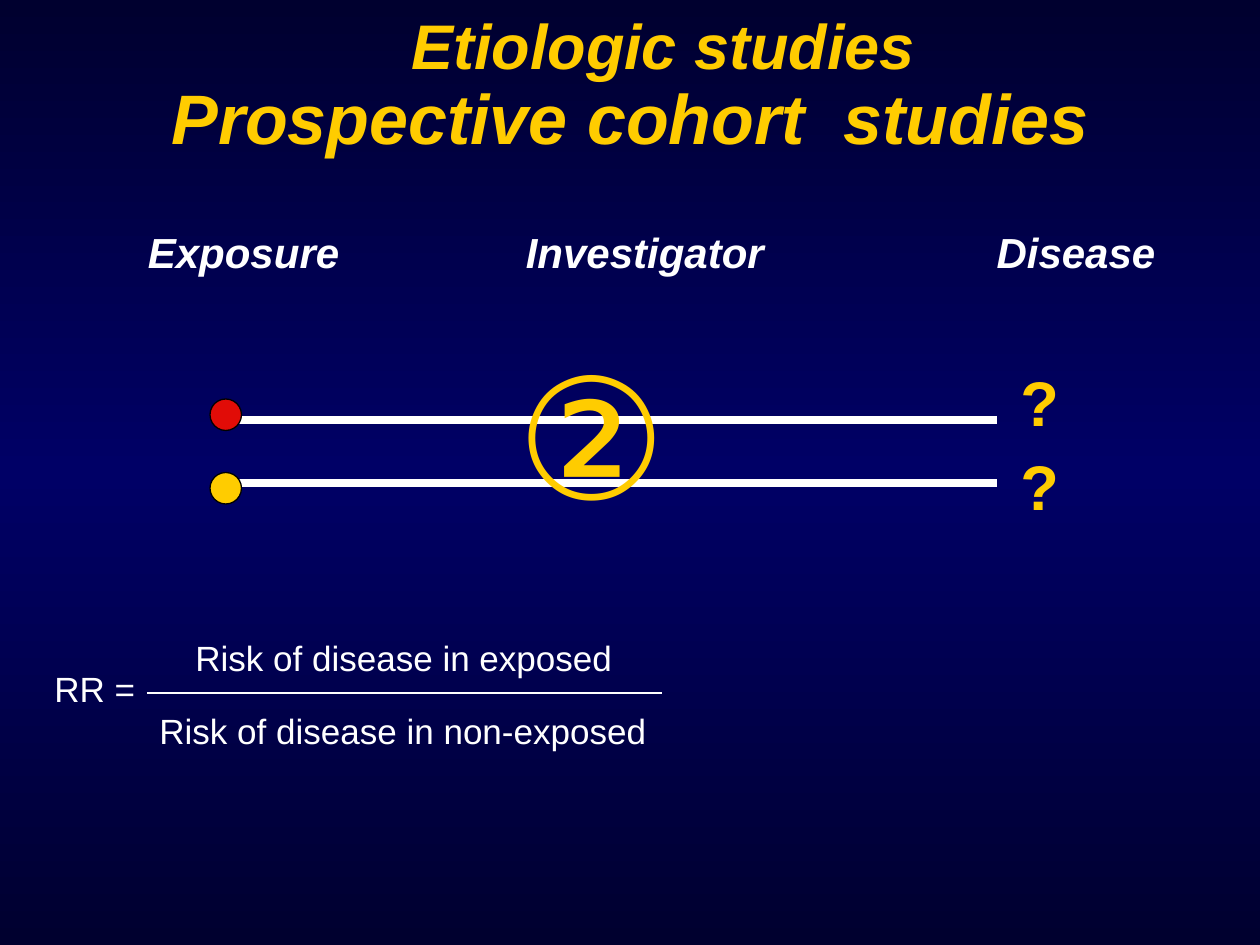
import copy

from pptx import Presentation
from pptx.dml.color import RGBColor
from pptx.enum import shapes, text
from pptx.oxml import parse_xml
from pptx.oxml.ns import nsdecls, qn
from pptx.util import Pt

YELLOW, WHITE, RED, BLACK = "FFCC00", "FFFFFF", "E10C07", "000000"
NAVY, BLUE = "00002F", "000066"
rgb = RGBColor.from_string


def set_text(sp, words, size, color, bold=False, italic=False):
    tf = sp.text_frame
    tf.word_wrap = True
    tf.auto_size = text.MSO_AUTO_SIZE.NONE
    p = tf.paragraphs[0]
    p.text = words
    f = p.font
    f.name, f.size, f.bold, f.italic = "Arial", Pt(size), bold, italic
    f.color.rgb = rgb(color)


def add_line(x1, x2, y, width):
    ln = s.shapes.add_connector(
        shapes.MSO_CONNECTOR.STRAIGHT, Pt(x1), Pt(y), Pt(x2), Pt(y))
    ln.line.color.rgb = rgb(WHITE)
    ln.line.width = Pt(width)
    ln.element.spPr.append(parse_xml(f"<a:effectLst {nsdecls('a')}/>"))


prs = Presentation()
prs.slide_width, prs.slide_height = Pt(720), Pt(540)
s = prs.slides.add_slide(prs.slide_layouts[5])

# Background: dark at top and bottom, lighter in the middle
fill = s.background.fill
fill.gradient()
fill.gradient_angle = 270
gs_list = s.element.find(".//" + qn("a:gsLst"))
gs_list.append(copy.deepcopy(gs_list[0]))
for stop, (pos, color) in zip(fill.gradient_stops, [(0, NAVY), (0.5, BLUE), (1, NAVY)]):
    stop.position = pos
    stop.color.rgb = rgb(color)

# Title
title = s.shapes.title
title.left, title.top, title.width, title.height = Pt(36), Pt(21.6), Pt(648), Pt(90)
set_text(title, "Prospective cohort  studies", 40, YELLOW, True, True)
title.text_frame.vertical_anchor = text.MSO_ANCHOR.MIDDLE
title.text_frame.paragraphs[0].alignment = text.PP_ALIGN.CENTER

# Follow-up lines of the two cohorts
for y in (276, 240):
    add_line(132, 570, y, 4.5)

# Exposed and non-exposed markers
for y, color in ((228, RED), (270, YELLOW)):
    dot = s.shapes.add_shape(shapes.MSO_SHAPE.OVAL, Pt(120), Pt(y), Pt(18), Pt(18))
    dot.shadow.inherit = False
    dot.fill.solid()
    dot.fill.fore_color.rgb = rgb(color)
    dot.line.color.rgb = rgb(BLACK)
    dot.line.width = Pt(0.75)

# Text: left, top, width, height, words, size, colour, bold, italic
labels = [
    (576, 204, 37, 50, "?", 36, YELLOW, True, False),
    (576, 252, 37, 50, "?", 36, YELLOW, True, False),
    (77.4, 126, 140, 36, "Exposure", 24, WHITE, True, True),
    (293.4, 126, 170, 36, "Investigator", 24, WHITE, True, True),
    (562.4, 126, 130, 36, "Disease", 24, WHITE, True, True),
    (288, 186, 110, 122, "②", 96, YELLOW, False, False),
    (104.5, 360, 300, 31, "Risk of disease in exposed", 20, WHITE, False, False),
    (84, 402, 360, 31, "Risk of disease in non-exposed", 20, WHITE, False, False),
    (24, 378, 90, 31, "RR =", 20, WHITE, False, False),
    (228, 0, 330, 50, "Etiologic studies", 36, YELLOW, True, True),
]
for x, y, w, h, *style in labels:
    set_text(s.shapes.add_textbox(Pt(x), Pt(y), Pt(w), Pt(h)), *style)

# Fraction bar of the relative risk
add_line(84, 378, 396, 0.75)

prs.save("out.pptx")
